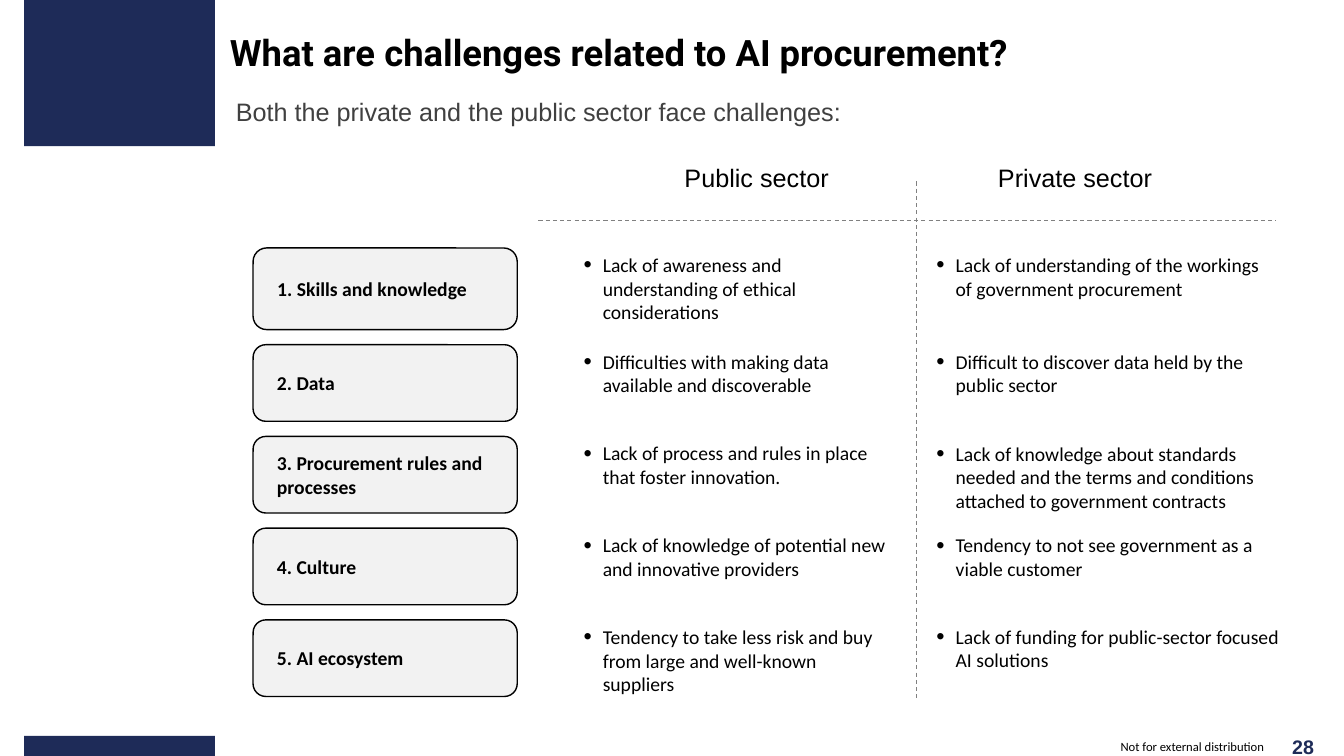
from dataclasses import dataclass

from lxml import etree
from pptx import Presentation
from pptx.dml.color import RGBColor
from pptx.enum.dml import MSO_LINE
from pptx.enum.shapes import MSO_CONNECTOR, MSO_SHAPE
from pptx.enum.text import MSO_ANCHOR, MSO_AUTO_SIZE, PP_ALIGN
from pptx.oxml.ns import qn
from pptx.util import Pt

RECT, ROUNDED = MSO_SHAPE.RECTANGLE, MSO_SHAPE.ROUNDED_RECTANGLE
STRAIGHT, DASH = MSO_CONNECTOR.STRAIGHT, MSO_LINE.DASH
TOP, MIDDLE = MSO_ANCHOR.TOP, MSO_ANCHOR.MIDDLE
LEFT, CENTER = PP_ALIGN.LEFT, PP_ALIGN.CENTER
FIT_SHAPE, NO_FIT = MSO_AUTO_SIZE.SHAPE_TO_FIT_TEXT, MSO_AUTO_SIZE.NONE

TITLE = "What are challenges related to AI procurement?"
SUBTITLE = "Both the private and the public sector face challenges:"
FOOTER = "Not for external distribution"
PAGE_NUMBER = "28"
SECTORS = [("Public sector", (669, 156, 165, 40)),
           ("Private sector", (980, 156, 174, 40))]

# Topic, then (challenge, lines it fills) for the public and the private sector
CHALLENGES = [
    ("1. Skills and knowledge",
     ("Lack of awareness and understanding of ethical considerations", 3),
     ("Lack of understanding of the workings of government procurement", 2)),
    ("2. Data",
     ("Difficulties with making data available and discoverable", 2),
     ("Difficult to discover data held by the public sector", 2)),
    ("3. Procurement rules and processes",
     ("Lack of process and rules in place that foster innovation.", 2),
     ("Lack of knowledge about standards needed and the terms and conditions "
      "attached to government contracts", 3)),
    ("4. Culture",
     ("Lack of knowledge of potential new and innovative providers", 2),
     ("Tendency to not see government as a viable customer", 2)),
    ("5. AI ecosystem",
     ("Tendency to take less risk and buy from large and well-known suppliers", 3),
     ("Lack of funding for public-sector focused AI solutions", 2)),
]


@dataclass(frozen=True)
class Theme:
    navy: str = "1E2B58"
    black: str = "000000"
    slate: str = "404040"
    panel: str = "F2F2F2"
    divider: str = "808080"
    title_font: str = "Roboto"
    head_font: str = "Arial"
    body_font: str = "Calibri"
    title_size: int = 26
    head_size: int = 18
    body_size: int = 14
    footer_size: int = 9


THEME = Theme()
SCALE = 9144  # EMU in one px, 100 px to the inch
NAVY_BLOCKS = [(24, 0, 189, 145), (24, 730, 189, 20)]
DIVIDERS = [(534, 219, 1265, 219), (909, 180, 909, 692)]
TOPIC_LEFT, TOPIC_WIDTH = 251, 262
SECTOR_COLUMNS = [(569, 320), (919, 360)]  # left, width
FIRST_TOP, FIRST_HEIGHT, ROW_HEIGHT, ROW_GAP = 246, 81, 76, 15
LINE_HEIGHT, BOX_PADDING = 24, 9
BULLET_INDENT = 19


def px(*lengths):
    return [length * SCALE for length in lengths]


def rgb(code):
    return RGBColor.from_string(code)


def add_block(slide, kind, box, fill, outline=None):
    block = slide.shapes.add_shape(kind, *px(*box))
    block.shadow.inherit = False
    block.fill.solid()
    block.fill.fore_color.rgb = rgb(fill)
    if outline:
        block.line.color.rgb = rgb(outline)
        block.line.width = Pt(1)
    else:
        block.line.fill.background()
    return block


def add_divider(slide, ends):
    divider = slide.shapes.add_connector(STRAIGHT, *px(*ends))
    divider.line.color.rgb = rgb(THEME.divider)
    divider.line.width = Pt(0.75)
    divider.line.dash_style = DASH
    etree.SubElement(divider._element.spPr, qn("a:effectLst"))


def add_bullet(paragraph):
    properties = paragraph._p.get_or_add_pPr()
    indent, = px(BULLET_INDENT)
    properties.set("marL", str(indent))
    properties.set("indent", str(-indent))
    color = etree.SubElement(properties, qn("a:buClr"))
    etree.SubElement(color, qn("a:srgbClr"), val=THEME.black)
    etree.SubElement(properties, qn("a:buSzPct"), val="120000")
    etree.SubElement(properties, qn("a:buFont"), typeface="Arial")
    etree.SubElement(properties, qn("a:buChar"), char="•")


def write(shape, text, *, font=THEME.body_font, size=THEME.body_size,
          color=THEME.black, bold=False, align=LEFT, anchor=TOP,
          insets=(10, 5, 10, 5), wrap=True, grow=False, bullet=False):
    """Fill the shape with one formatted paragraph; insets are left, top, right, bottom."""
    frame = shape.text_frame
    frame.word_wrap = wrap
    frame.auto_size = FIT_SHAPE if grow else NO_FIT
    frame.vertical_anchor = anchor
    (frame.margin_left, frame.margin_top,
     frame.margin_right, frame.margin_bottom) = px(*insets)
    paragraph = frame.paragraphs[0]
    paragraph.alignment = align
    if bullet:
        add_bullet(paragraph)
    run = paragraph.add_run()
    run.text = text
    run.font.name = font
    run.font.size = Pt(size)
    run.font.bold = bold
    run.font.color.rgb = rgb(color)


def add_text(slide, box, text, **style):
    write(slide.shapes.add_textbox(*px(*box)), text, **style)


def add_challenges(slide):
    top = FIRST_TOP
    for row, (topic, *challenges) in enumerate(CHALLENGES):
        height = ROW_HEIGHT if row else FIRST_HEIGHT
        panel = add_block(slide, ROUNDED, (TOPIC_LEFT, top, TOPIC_WIDTH, height),
                          THEME.panel, THEME.black)
        write(panel, topic, bold=True, anchor=MIDDLE, insets=(20, 5, 10, 5))
        for (left, width), (challenge, lines) in zip(SECTOR_COLUMNS, challenges):
            box = (left, top, width, lines * LINE_HEIGHT + BOX_PADDING)
            add_text(slide, box, challenge, grow=True, bullet=True)
        top += height + ROW_GAP


def main():
    deck = Presentation()
    deck.slide_width, deck.slide_height = px(1333, 750)
    slide = deck.slides.add_slide(deck.slide_layouts[6])

    for box in NAVY_BLOCKS:
        add_block(slide, RECT, box, THEME.navy)
    for sector, box in SECTORS:
        add_text(slide, box, sector, font=THEME.head_font, size=THEME.head_size,
                 wrap=False, grow=True)
    for ends in DIVIDERS:
        add_divider(slide, ends)
    add_challenges(slide)

    add_text(slide, (228, 30, 881, 92), TITLE, font=THEME.title_font,
             size=THEME.title_size, bold=True, insets=(0, 0, 10, 0))
    add_text(slide, (224, 91, 949, 47), SUBTITLE, font=THEME.head_font,
             size=THEME.head_size, color=THEME.slate)
    add_text(slide, (1277, 726, 31, 30), PAGE_NUMBER, font=THEME.head_font,
             color=THEME.navy, bold=True, align=CENTER, anchor=MIDDLE,
             insets=(0, 0, 0, 0))
    add_text(slide, (1098, 734, 169, 14), FOOTER, size=THEME.footer_size,
             align=CENTER, anchor=MIDDLE)
    deck.save("out.pptx")


if __name__ == "__main__":
    main()
